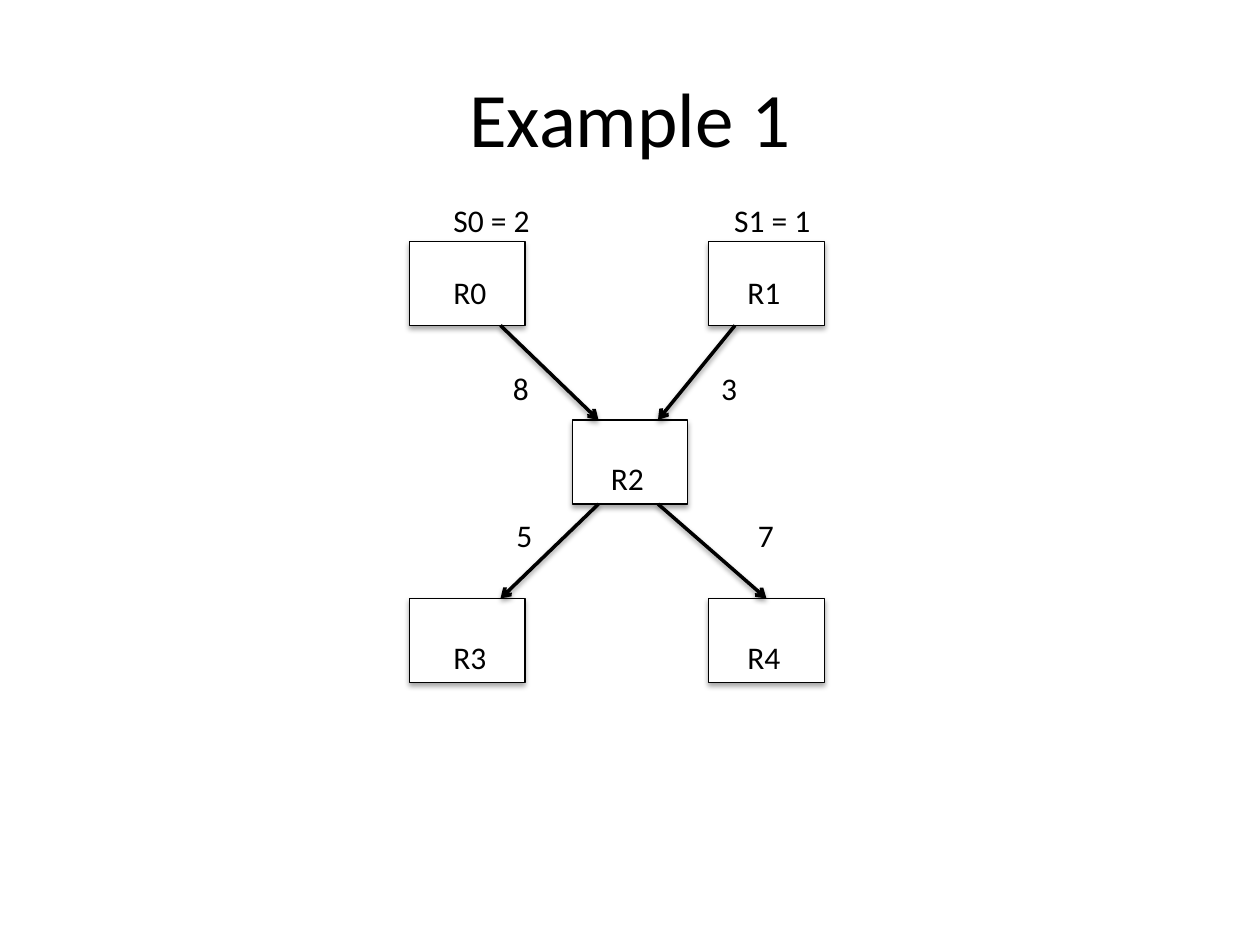
from lxml.etree import SubElement
from pptx import Presentation
from pptx.dml.color import RGBColor
from pptx.enum.shapes import MSO_CONNECTOR, MSO_SHAPE
from pptx.enum.text import MSO_AUTO_SIZE, PP_ALIGN
from pptx.oxml.ns import qn
from pptx.util import Pt

FONT, BLACK, WHITE = "Calibri", "000000", "FFFFFF"
BOX_W, BOX_H = 66, 48
LABEL_H = 29
ROWS = [138 + 102 * i for i in range(3)]

# Router: box left, box row, label left, label top
ROUTERS = {
    "R0": (234, 0, 252, 152.5),
    "R1": (405, 0, 420, 152.5),
    "R2": (327, 1, 342, 259),
    "R3": (234, 2, 252, 361),
    "R4": (405, 2, 420, 361),
}
# Link: start x, end x, row it leaves, cost, cost left, cost top
LINKS = [
    (286, 342, 0, "8", 286, 207.5),
    (420, 376, 0, "3", 405, 207.5),
    (342, 286, 1, "5", 288, 291.5),
    (376, 438, 1, "7", 426, 291.5),
]
SOURCES = [("S0 = 2", 252), ("S1 = 1", 412.5)]


def rgb(value):
    return RGBColor.from_string(value)


def style_text(tf, size):
    for p in tf.paragraphs:
        for r in p.runs:
            r.font.name, r.font.size = FONT, Pt(size)
            r.font.color.rgb = rgb(BLACK)


def add_shadow(sp, distance, alpha):
    """Give a shape or connector a soft shadow straight below it."""
    spPr = sp._element.spPr
    effects = spPr.find(qn("a:effectLst"))
    if effects is None:
        effects = SubElement(spPr, qn("a:effectLst"))
    shadow = SubElement(effects, qn("a:outerShdw"), blurRad=str(Pt(3.1)),
                        dist=str(Pt(distance)), dir="5400000", rotWithShape="0")
    color = SubElement(shadow, qn("a:srgbClr"), val=BLACK)
    SubElement(color, qn("a:alpha"), val=str(alpha * 1000))


def add_title(s, text):
    title = s.shapes.title
    title.left, title.top, title.width, title.height = Pt(36), Pt(21.6), Pt(648), Pt(90)
    tf = title.text_frame
    tf.text = text
    tf.paragraphs[0].alignment = PP_ALIGN.CENTER
    style_text(tf, 44)


def add_box(s, x, y):
    sp = s.shapes.add_shape(MSO_SHAPE.RECTANGLE, Pt(x), Pt(y), Pt(BOX_W), Pt(BOX_H))
    sp.fill.solid()
    sp.fill.fore_color.rgb = rgb(WHITE)
    sp.line.color.rgb = rgb(BLACK)
    sp.line.width = Pt(0.75)
    sp.shadow.inherit = False
    add_shadow(sp, 1.8, 35)


def add_label(s, text, x, y, width):
    tf = s.shapes.add_textbox(Pt(x), Pt(y), Pt(width), Pt(LABEL_H)).text_frame
    tf.word_wrap = False
    tf.auto_size = MSO_AUTO_SIZE.SHAPE_TO_FIT_TEXT
    tf.text = text
    style_text(tf, 18)


def add_arrow(s, x1, y1, x2, y2):
    line = s.shapes.add_connector(MSO_CONNECTOR.STRAIGHT, Pt(x1), Pt(y1), Pt(x2), Pt(y2))
    line.line.color.rgb = rgb(BLACK)
    line.line.width = Pt(2)
    SubElement(line.line._get_or_add_ln(), qn("a:tailEnd"), type="arrow")
    add_shadow(line, 1.6, 38)


def main():
    prs = Presentation()
    prs.slide_width, prs.slide_height = Pt(720), Pt(540)
    s = prs.slides.add_slide(prs.slide_layouts[5])
    add_title(s, "Example 1")

    # Routers
    for name, (x, row, label_x, label_y) in ROUTERS.items():
        add_box(s, x, ROWS[row])
        add_label(s, name, label_x, label_y, 34)

    # Links with their costs
    for x1, x2, row, cost, cost_x, cost_y in LINKS:
        add_arrow(s, x1, ROWS[row] + BOX_H, x2, ROWS[row + 1])
        add_label(s, cost, cost_x, cost_y, 24)

    # Source values above the top routers
    for text, x in SOURCES:
        add_label(s, text, x, 111.5, 58)

    prs.save("out.pptx")


if __name__ == "__main__":
    main()
